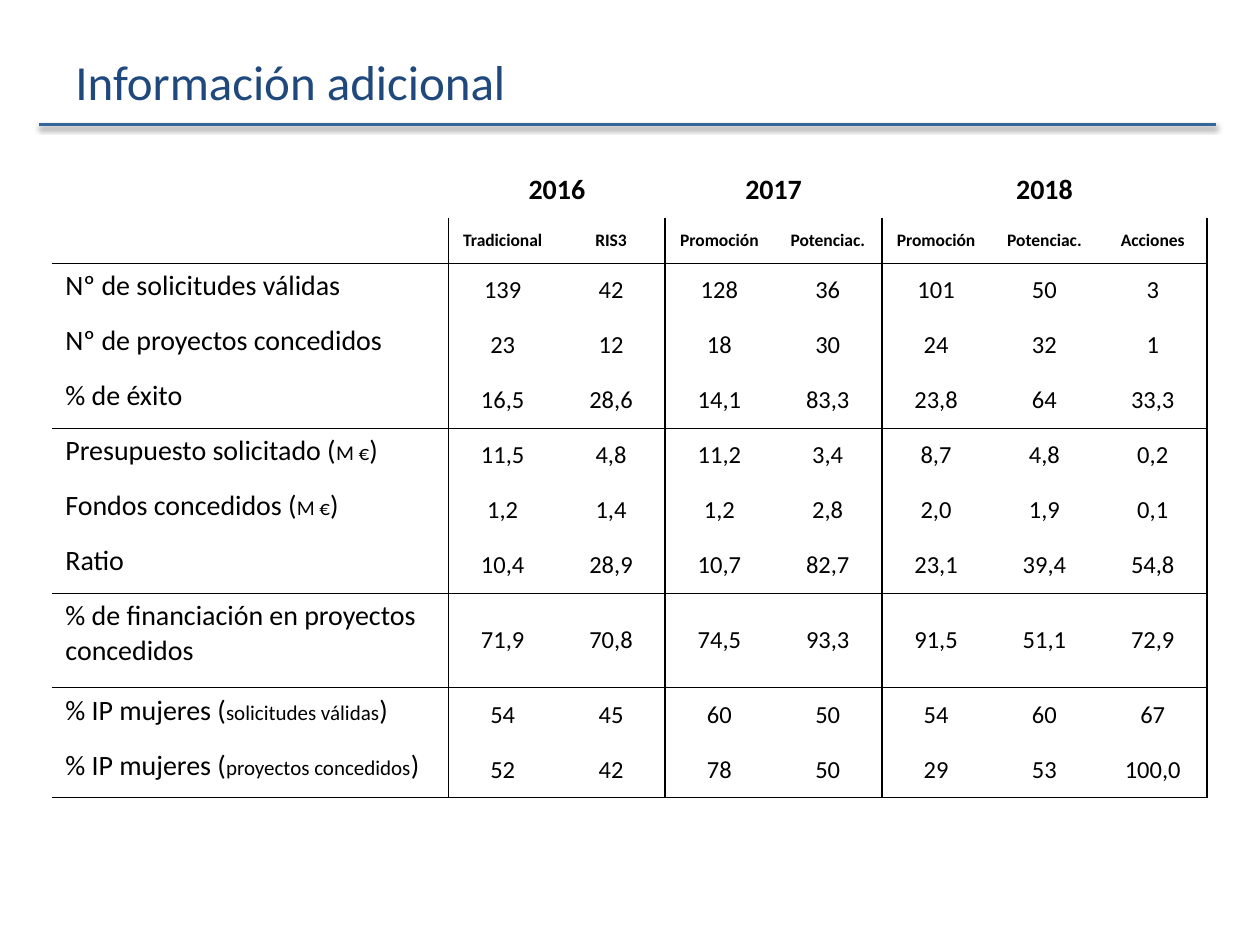
from lxml.etree import SubElement
from pptx import Presentation
from pptx.dml.color import RGBColor
from pptx.enum.shapes import MSO_CONNECTOR
from pptx.enum.text import MSO_ANCHOR as ANCHOR, PP_ALIGN as ALIGN
from pptx.oxml.ns import qn
from pptx.util import Inches, Pt

NAVY = RGBColor(0x1F, 0x49, 0x7D)
BLUE = RGBColor(0x33, 0x66, 0x99)
BLACK = RGBColor(0, 0, 0)
WHITE = RGBColor(255, 255, 255)
FONT = "Calibri"

YEARS = [("2016", 1, 2), ("2017", 3, 4), ("2018", 5, 7)]  # text, first and last column
CALLS = ["", "Tradicional", "RIS3", "Promoción", "Potenciac.",
         "Promoción", "Potenciac.", "Acciones"]
# A bar in a label separates large and small text
BODY = [
    ["Nº de solicitudes válidas", "139", "42", "128", "36", "101", "50", "3"],
    ["Nº de proyectos concedidos", "23", "12", "18", "30", "24", "32", "1"],
    ["% de éxito", "16,5", "28,6", "14,1", "83,3", "23,8", "64", "33,3"],
    ["Presupuesto solicitado (|M €|)", "11,5", "4,8", "11,2", "3,4", "8,7", "4,8", "0,2"],
    ["Fondos concedidos (|M €|)", "1,2", "1,4", "1,2", "2,8", "2,0", "1,9", "0,1"],
    ["Ratio", "10,4", "28,9", "10,7", "82,7", "23,1", "39,4", "54,8"],
    ["% de financiación en proyectos concedidos",
     "71,9", "70,8", "74,5", "93,3", "91,5", "51,1", "72,9"],
    ["% IP mujeres (|solicitudes válidas|)", "54", "45", "60", "50", "54", "60", "67"],
    ["% IP mujeres (|proyectos concedidos|)", "52", "42", "78", "50", "29", "53", "100,0"],
]
GROUP_ENDS = {0, 2, 4, 7}        # columns with a line on their right
SECTION_ENDS = {1, 4, 7, 8, 10}  # rows with a line below
LABEL_W, CALL_H, TALL_ROW, TALL_H = 3.15, 0.36, 8, 0.75


def add_run(p, text, size, color=BLACK, bold=False):
    r = p.add_run()
    r.text = text
    for name, value in dict(name=FONT, size=Pt(size), bold=bold).items():
        setattr(r.font, name, value)
    r.font.color.rgb = color


def add_title(slide, text, left, top, width, height):
    tf = slide.shapes.add_textbox(*map(Inches, (left, top, width, height))).text_frame
    tf.word_wrap = True
    tf.vertical_anchor = ANCHOR.MIDDLE
    add_run(tf.paragraphs[0], text, 28, NAVY)


def add_rule(slide, left, top, width):
    line = slide.shapes.add_connector(
        MSO_CONNECTOR.STRAIGHT, *map(Inches, (left, top, left + width, top)))
    line.line.color.rgb = BLUE
    line.line.width = Pt(2)
    # Soft shadow below the rule
    effects = SubElement(line._element.spPr, qn("a:effectLst"))
    shadow = SubElement(effects, qn("a:outerShdw"), blurRad=str(Pt(3.1)),
                        dist=str(Pt(1.6)), dir="5400000", rotWithShape="0")
    color = SubElement(shadow, qn("a:srgbClr"), val="000000")
    SubElement(color, qn("a:alpha"), val="38000")


def set_borders(cell, row, col):
    column_line = 1 if row > 0 else 0
    widths = {
        "L": column_line if col - 1 in GROUP_ENDS else 0,
        "R": column_line if col in GROUP_ENDS else 0,
        "T": 0.25 if row - 1 in SECTION_ENDS else 0,
        "B": 0.25 if row in SECTION_ENDS else 0,
    }
    tc_pr = cell._tc.get_or_add_tcPr()
    for side, width in widths.items():
        ln = SubElement(tc_pr, qn(f"a:ln{side}"), w=str(Pt(width)))
        if width:
            fill = SubElement(ln, qn("a:solidFill"))
            SubElement(fill, qn("a:srgbClr"), val=str(BLACK))
        else:
            SubElement(ln, qn("a:noFill"))


def fill_cell(cell, text, row, col):
    set_borders(cell, row, col)
    cell.fill.solid()
    cell.fill.fore_color.rgb = WHITE
    is_label = col == 0 and row > 1
    cell.vertical_anchor = ANCHOR.TOP if is_label else ANCHOR.MIDDLE
    cell.margin_left = cell.margin_right = Inches(0.11)
    p = cell.text_frame.paragraphs[0]
    p.alignment = ALIGN.LEFT if is_label else ALIGN.CENTER
    if not text:
        # Keeps empty cells from stretching their row
        SubElement(p._p, qn("a:endParaRPr"), sz="1000")
    elif is_label:
        for i, part in enumerate(text.split("|")):
            add_run(p, part, 12 if i % 2 else 16)
    else:
        add_run(p, text, {0: 16, 1: 10}.get(row, 14), bold=row < 2)


def add_results_table(slide, left, top, width, height):
    year_row = [""] * len(CALLS)
    for year, first, _ in YEARS:
        year_row[first] = year
    rows = [year_row, CALLS, *BODY]
    frame = slide.shapes.add_table(
        len(rows), len(CALLS), *map(Inches, (left, top, width, height)))
    table = frame.table
    table.first_row = table.horz_banding = False

    # Columns and rows
    value_w = (width - LABEL_W) / (len(CALLS) - 1)
    for i, column in enumerate(table.columns):
        column.width = Inches(value_w if i else LABEL_W)
    row_h = (height - CALL_H - TALL_H) / (len(rows) - 2)
    for i, row in enumerate(table.rows):
        row.height = Inches({1: CALL_H, TALL_ROW: TALL_H}.get(i, row_h))

    # Cells
    for r, values in enumerate(rows):
        for c, text in enumerate(values):
            fill_cell(table.cell(r, c), text, r, c)
    for _, first, last in YEARS:
        table.cell(0, first).merge(table.cell(0, last))


def main():
    prs = Presentation()
    prs.slide_width, prs.slide_height = Inches(10), Inches(7.5)
    slide = prs.slides.add_slide(prs.slide_layouts[6])
    add_rule(slide, 0.31, 0.99, 9.34)
    add_title(slide, "Información adicional", 0.5, 0.3, 9, 0.69)
    add_results_table(slide, 0.41, 1.29, 9.17, 5.04)
    prs.save("out.pptx")


if __name__ == "__main__":
    main()
